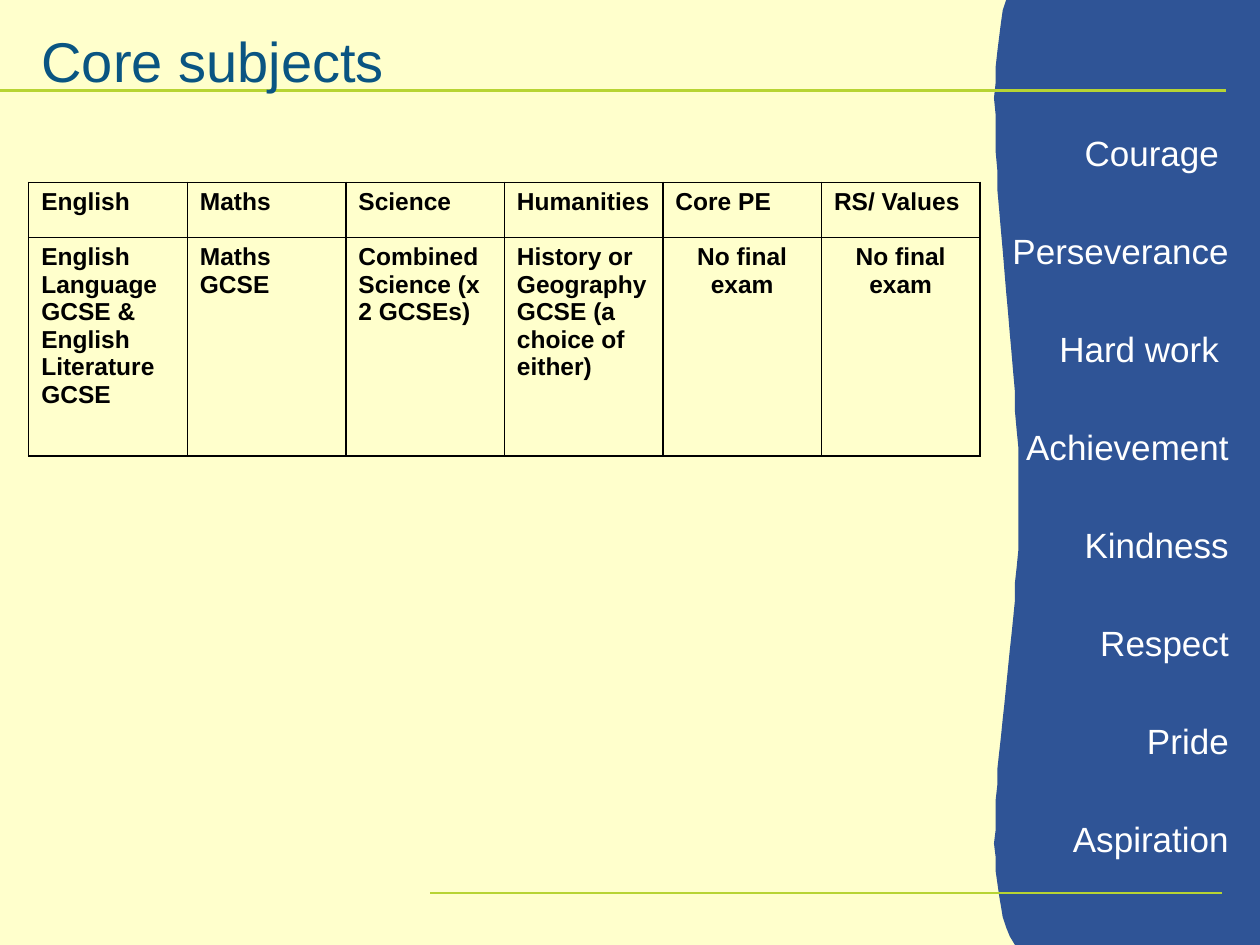
import pptx
import pptx.util
import pptx.dml.color
import pptx.enum.shapes
import pptx.enum.text
import pptx.oxml
import pptx.oxml.ns

Pt = pptx.util.Pt
RGBColor = pptx.dml.color.RGBColor
PP_ALIGN = pptx.enum.text.PP_ALIGN

CREAM = RGBColor(0xFF, 0xFF, 0xCC)
BLUE = RGBColor(0x2F, 0x54, 0x96)
GREEN = RGBColor(0xB7, 0xD4, 0x33)
TEAL = RGBColor(0x0A, 0x55, 0x82)
WHITE = RGBColor(0xFF, 0xFF, 0xFF)
BLACK = RGBColor(0, 0, 0)

VALUES = ["Courage ", "Perseverance", "Hard work ", "Achievement",
          "Kindness", "Respect", "Pride", "Aspiration"]
SUBJECTS = {
    "English": "English Language GCSE & English Literature GCSE",
    "Maths": "Maths GCSE",
    "Science": "Combined Science (x 2 GCSEs)",
    "Humanities": "History or Geography GCSE (a choice of either)",
    "Core PE": "No final\nexam",
    "RS/ Values": "No final\nexam",
}


def style_font(font, size, color, bold=False):
    font.name = "Arial"
    font.size = Pt(size)
    font.color.rgb = color
    font.bold = bold


def bezier(start, control1, control2, end, steps=30):
    """Points along a cubic curve, without its start."""
    for step in range(1, steps + 1):
        t = step / steps
        u = 1 - t
        yield tuple(u**3 * a + 3 * u * u * t * b + 3 * u * t * t * c + t**3 * d
                    for a, b, c, d in zip(start, control1, control2, end))


def add_wave_panel(slide, left, top, right, bottom):
    waist = (left + 2.9, top + 296.6)
    lower_left = (left, bottom)
    outline = [(right, top), (right, bottom), lower_left]
    outline += bezier(lower_left, (left - 26.6, bottom - 45.4),
                      (waist[0], waist[1] + 91.4), waist)
    outline += bezier(waist, (waist[0], waist[1] - 92.2),
                      (left - 26.6, top + 46.1), (left, top))
    builder = slide.shapes.build_freeform(left, top, scale=Pt(1))
    builder.add_line_segments(outline, close=True)
    panel = builder.convert_to_shape()
    panel.shadow.inherit = False
    panel.fill.solid()
    panel.fill.fore_color.rgb = BLUE
    panel.line.fill.background()


def add_rule(slide, start, end, y, width):
    rule = slide.shapes.add_connector(
        pptx.enum.shapes.MSO_CONNECTOR.STRAIGHT, Pt(start), Pt(y), Pt(end), Pt(y))
    rule.line.color.rgb = GREEN
    rule.line.width = Pt(width)
    properties = rule._element.spPr
    properties.append(properties.makeelement(pptx.oxml.ns.qn("a:effectLst"), {}))


def add_values(slide, left, top, width, height):
    values_box = slide.shapes.add_textbox(Pt(left), Pt(top), Pt(width), Pt(height))
    frame = values_box.text_frame
    frame.word_wrap = True
    frame.auto_size = pptx.enum.text.MSO_AUTO_SIZE.SHAPE_TO_FIT_TEXT
    frame.text = "\n".join(VALUES)
    for index, value in enumerate(frame.paragraphs):
        value.alignment = PP_ALIGN.RIGHT
        value.line_spacing = 2.0
        value.space_before = Pt(8 if index else 0)
        style_font(value.runs[0].font, 20, WHITE)


def place_title(slide, left, top, width, height):
    title = slide.shapes.title
    title.left, title.top = Pt(left), Pt(top)
    title.width, title.height = Pt(width), Pt(height)
    frame = title.text_frame
    frame.text = "Core subjects"
    frame.word_wrap = True
    frame.auto_size = pptx.enum.text.MSO_AUTO_SIZE.NONE
    frame.vertical_anchor = pptx.enum.text.MSO_ANCHOR.BOTTOM
    heading = frame.paragraphs[0]
    heading.alignment = PP_ALIGN.LEFT
    heading.line_spacing = 0.9
    style_font(heading.runs[0].font, 32, TEAL)
    # Bring the title in front of the rule
    slide.shapes._spTree.append(title._element)


def add_borders(cell):
    properties = cell._tc.get_or_add_tcPr()
    for index, side in enumerate(("lnL", "lnR", "lnT", "lnB")):
        properties.insert(index, pptx.oxml.parse_xml(
            f'<a:{side} {pptx.oxml.ns.nsdecls("a")} w="{Pt(1)}"><a:solidFill>'
            f'<a:srgbClr val="{BLACK}"/></a:solidFill></a:{side}>'))


def add_subject_table(slide, left, top, width, row_heights):
    table = slide.shapes.add_table(
        len(row_heights), len(SUBJECTS), Pt(left), Pt(top),
        Pt(width), Pt(sum(row_heights))).table
    table.first_row = table.horz_banding = False
    for row, height in zip(table.rows, row_heights):
        row.height = Pt(height)
    for column, entries in enumerate(SUBJECTS.items()):
        table.columns[column].width = Pt(width / len(SUBJECTS))
        for row, entry in enumerate(entries):
            cell = table.cell(row, column)
            cell.text_frame.text = entry
            cell.fill.background()
            add_borders(cell)
            for line in cell.text_frame.paragraphs:
                if entry.startswith("No final"):
                    line.alignment = PP_ALIGN.CENTER
                style_font(line.runs[0].font, 14, BLACK, bold=True)


def main():
    deck = pptx.Presentation()
    deck.slide_width, deck.slide_height = Pt(720), Pt(540)
    slide = deck.slides.add_slide(deck.slide_layouts[5])
    slide.background.fill.solid()
    slide.background.fill.fore_color.rgb = CREAM

    # Side panel with the school values
    add_wave_panel(slide, 579.6, -10.8, 720, 540)
    add_rule(slide, 698.4, 245.5, 510.3, 1)
    add_values(slide, 557.3, 47.5, 152, 445)

    # Heading
    add_rule(slide, 700.6, 0, 51.6, 1.5)
    place_title(slide, 16.5, 5, 343.5, 52.6)

    # Subjects and their exams
    add_subject_table(slide, 16.4, 104.2, 543.6, [31.4, 125])
    deck.save("out.pptx")


if __name__ == "__main__":
    main()
